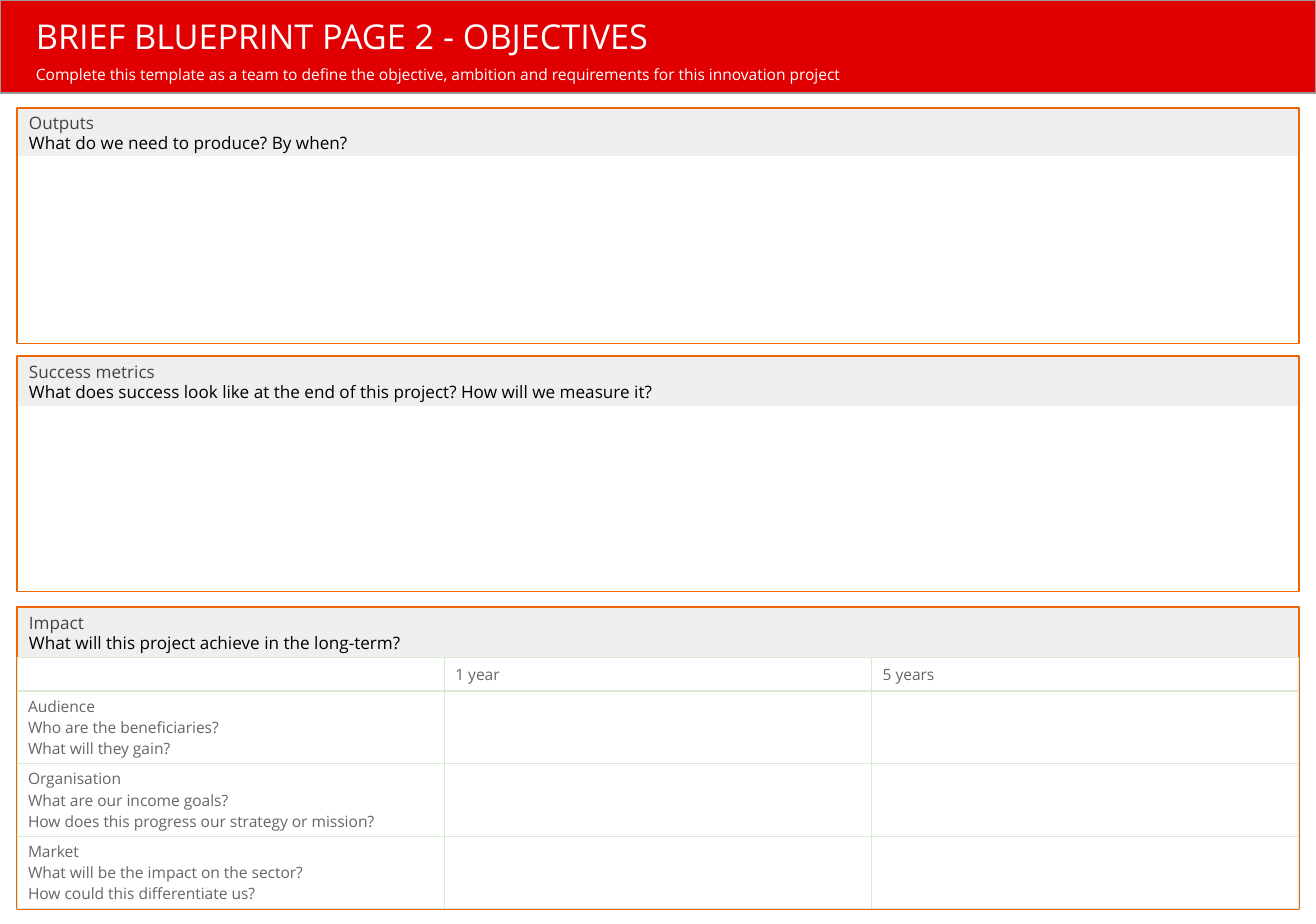
from lxml import etree
from pptx import Presentation
from pptx.enum.shapes import MSO_SHAPE
from pptx.enum.text import MSO_ANCHOR, PP_ALIGN
from pptx.dml.color import RGBColor
from pptx.oxml.ns import qn
from pptx.util import Pt

RECTANGLE = MSO_SHAPE.RECTANGLE
TOP, MIDDLE = MSO_ANCHOR.TOP, MSO_ANCHOR.MIDDLE
LEFT = PP_ALIGN.LEFT
EMU_PER_PX = 914400 / 112
FONT = "Open Sans"
LINE_WIDTH = Pt(0.75)
INSET = 12
COLORS = {
    "red": "E10001", "header_edge": "999999", "orange": "EC6608",
    "band": "EFEFEF", "heading": "434343", "black": "000000",
    "white": "FFFFFF", "cell_text": "666666", "grid": "D9EAD3",
}

SECTIONS = [
    # heading, question, (left, top, width, height), band height
    ("Outputs", "What do we need to produce? By when?", (17, 108, 1282, 236), 47),
    ("Success metrics",
     "What does success look like at the end of this project? How will we measure it?",
     (17, 356, 1282, 236), 49),
    ("Impact", "What will this project achieve in the long-term?",
     (17, 607, 1282, 302), 49),
]
IMPACT_ROWS = [
    [[], ["1 year"], ["5 years"]],
    [["Audience", "Who are the beneficiaries?", "What will they gain?"], [], []],
    [["Organisation", "What are our income goals?",
      "How does this progress our strategy or mission?"], [], []],
    [["Market", "What will be the impact on the sector?",
      "How could this differentiate us?"], [], []],
]


def px(length):
    return round(length * EMU_PER_PX)


def color(name):
    return RGBColor.from_string(COLORS[name])


def write(frame, text, size, ink, first=False, spacing=None, after=None):
    """Put text in the frame's first paragraph or in a new one."""
    para = frame.paragraphs[0] if first else frame.add_paragraph()
    para.alignment = LEFT
    if spacing:
        para.line_spacing = spacing
    if after:
        para.space_after = Pt(after)
    span = para.add_run()
    span.text = text
    span.font.name = FONT
    span.font.size = Pt(size)
    span.font.color.rgb = color(ink)


def set_frame(frame, anchor):
    frame.word_wrap = True
    frame.vertical_anchor = anchor
    frame.margin_left = frame.margin_right = px(INSET)
    frame.margin_top = frame.margin_bottom = px(INSET)


def add_rectangle(page, box, fill=None, line=None):
    shape = page.shapes.add_shape(RECTANGLE, *map(px, box))
    shape.shadow.inherit = False
    if fill:
        shape.fill.solid()
        shape.fill.fore_color.rgb = color(fill)
    else:
        shape.fill.background()
    if line:
        shape.line.color.rgb = color(line)
        shape.line.width = LINE_WIDTH
    else:
        shape.line.fill.background()
    return shape


def add_header(page, box):
    left, top, width, height = box
    add_rectangle(page, box, fill="red", line="header_edge")
    title_box = (left + 24, top + 3, 920, height - 8)
    frame = page.shapes.add_textbox(*map(px, title_box)).text_frame
    set_frame(frame, TOP)
    write(frame, "BRIEF BLUEPRINT PAGE 2 - OBJECTIVES", 22, "white", first=True)
    write(frame, "Complete this template as a team to define the objective, "
          "ambition and requirements for this innovation project",
          10, "white", spacing=1.5, after=17)


def add_section(page, heading, question, box, band_height):
    left, top, width, height = box
    band = add_rectangle(page, (left, top + 1, width, band_height), fill="band")
    set_frame(band.text_frame, MIDDLE)
    write(band.text_frame, heading, 11, "heading", first=True)
    write(band.text_frame, question, 11, "black")
    add_rectangle(page, box, line="orange")


def format_cell(cell, lines):
    cell.vertical_anchor = MIDDLE
    cell.margin_left = cell.margin_right = px(11)
    cell.margin_top = cell.margin_bottom = 0
    for index, text in enumerate(lines):
        write(cell.text_frame, text, 10, "cell_text", first=index == 0)
    if not lines:
        # A small end mark keeps an empty cell from stretching its row.
        para = cell.text_frame.paragraphs[0]
        etree.SubElement(para._p, qn("a:endParaRPr"), sz="1000")
    properties = cell._tc.get_or_add_tcPr()
    for side in ("lnL", "lnR", "lnT", "lnB"):
        border = etree.SubElement(properties, qn(f"a:{side}"), w=str(LINE_WIDTH))
        paint = etree.SubElement(border, qn("a:solidFill"))
        etree.SubElement(paint, qn("a:srgbClr"), val=COLORS["grid"])
    cell.fill.background()


def add_impact_table(page, box):
    left, top, width, height = box
    columns = len(IMPACT_ROWS[0])
    table = page.shapes.add_table(len(IMPACT_ROWS), columns, *map(px, box)).table
    table.first_row = table.horz_banding = False
    header_height = 34
    body_height = (height - header_height) / (len(IMPACT_ROWS) - 1)
    for column in table.columns:
        column.width = px(width / columns)
    for index, lines_by_column in enumerate(IMPACT_ROWS):
        table.rows[index].height = px(body_height if index else header_height)
        for column, lines in enumerate(lines_by_column):
            format_cell(table.cell(index, column), lines)


def main():
    deck = Presentation()
    deck.slide_width, deck.slide_height = px(1316), px(924)
    page = deck.slides.add_slide(deck.slide_layouts[6])
    add_header(page, (0, 0, 1316, 93))
    for section in SECTIONS:
        add_section(page, *section)
    add_impact_table(page, (17, 657, 1282, 252))
    deck.save("out.pptx")


if __name__ == "__main__":
    main()
